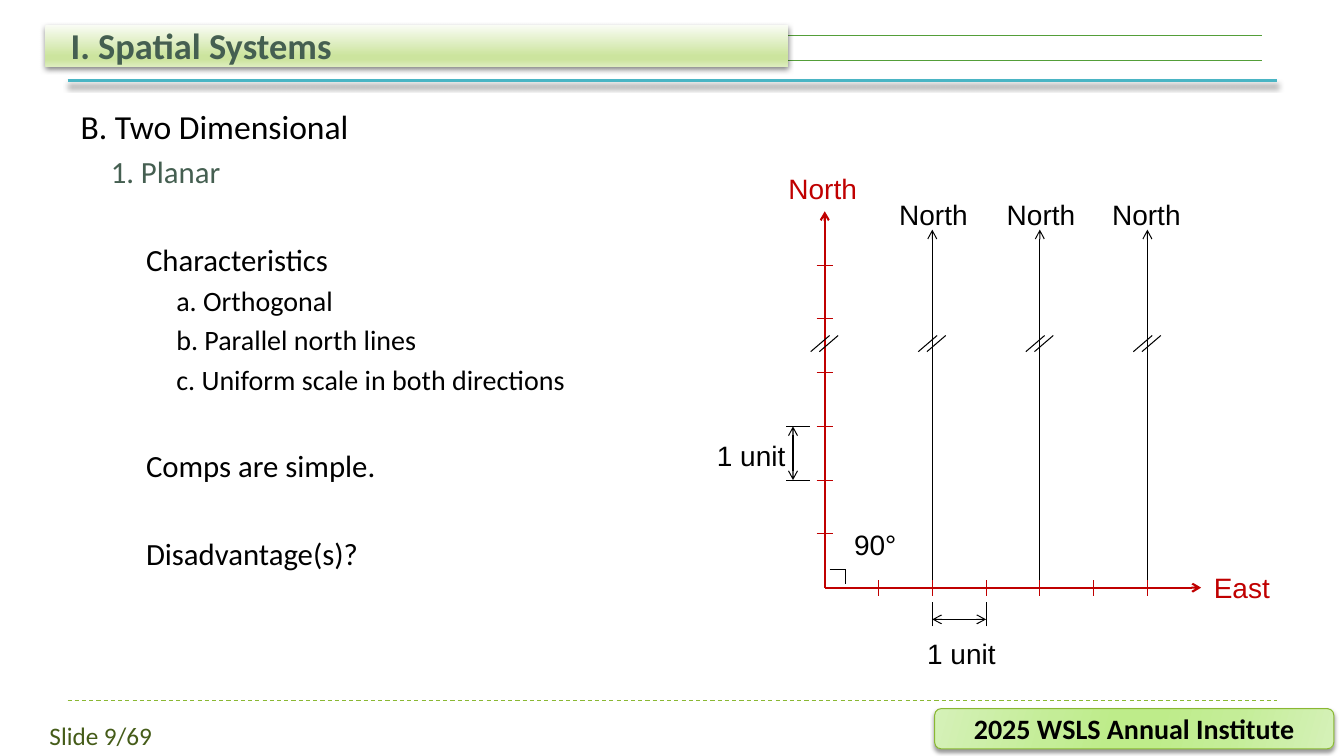
from dataclasses import dataclass

from lxml.etree import SubElement
from pptx import Presentation
from pptx.dml.color import RGBColor
from pptx.enum.dml import MSO_LINE
from pptx.enum.shapes import MSO_CONNECTOR, MSO_SHAPE
from pptx.enum.text import MSO_ANCHOR, MSO_AUTO_SIZE, PP_ALIGN
from pptx.oxml.ns import qn
from pptx.util import Inches, Pt

COLOURS = {
    "ink": "000000", "axis": "C00000", "heading": "455F51", "page": "455C19",
    "teal": "4AB5C4", "green": "549E39", "lime": "8AB833",
}
BANNER_STOPS = [(0, "F9FCF4"), (74, "CCE49E"), (83, "CCE49E"), (100, "DDEDBE")]
BADGE_STOPS = [(0, "D5F1B8"), (30, "C4ED97"), (45, "BEEC8A"),
               (55, "BEEC8A"), (73, "C4ED97"), (100, "D5F1B8")]
LEVELS = [(0, 24, 6), (0.3, 22, 5), (0.65, 22, 5), (0.95, 20, 4)]
SECTION_GAP = 36.5
OUTLINE = [
    (0, "B. Two Dimensional", "ink", False),
    (1, "1. Planar", "heading", False),
    (2, "Characteristics", "ink", True),
    (3, "a. Orthogonal", "ink", False),
    (3, "b. Parallel north lines", "ink", False),
    (3, "c. Uniform scale in both directions", "ink", False),
    (2, "Comps are simple.", "ink", True),
    (2, "Disadvantage(s)?", "ink", True),
]


@dataclass
class Grid:
    """Square cells counted from a corner, with rows running down or up."""
    left: float
    top: float
    cell: float
    down: int = 1

    def point(self, col, row):
        """Return the slide position of a grid point."""
        return (Inches(self.left + col * self.cell),
                Inches(self.top + self.down * row * self.cell))

    def box(self, col, row, cols, rows):
        """Return left, top, width and height of a block of cells."""
        return (*self.point(col, row), Inches(cols * self.cell), Inches(rows * self.cell))


PAGE = Grid(0, 0, 1)
PLOT = Grid(8.18, 5.83, 3.2 / 6, -1)


def rgb(name):
    """Look up a named colour."""
    return RGBColor.from_string(COLOURS[name])


def cast_shadow(effects, opacity, blur, distance):
    """Put a black shadow below the owner of an effect list."""
    shadow = SubElement(effects, qn("a:outerShdw"), blurRad=str(Pt(blur)),
                        dist=str(Pt(distance)), dir="5400000", rotWithShape="0")
    black = SubElement(shadow, qn("a:srgbClr"), val=COLOURS["ink"])
    SubElement(black, qn("a:alpha"), val=str(opacity * 1000))


def draw_line(slide, grid, start, end, colour="ink", weight=0.75, arrows="", dash=None, shadow=None):
    """Draw a line between grid points, with arrows at head, tail or both."""
    line = slide.shapes.add_connector(
        MSO_CONNECTOR.STRAIGHT, *grid.point(*start), *grid.point(*end))
    line.line.color.rgb = rgb(colour)
    line.line.width = Pt(weight)
    if dash:
        line.line.dash_style = dash
    properties = line.element.spPr
    for side in arrows.split():
        SubElement(properties.find(qn("a:ln")), qn(f"a:{side}End"), type="arrow")
    effects = SubElement(properties, qn("a:effectLst"))
    if shadow:
        cast_shadow(effects, *shadow)


def draw_panel(slide, outline, area, stops, angle, shadow):
    """Draw a gradient panel with a shadow."""
    panel = slide.shapes.add_shape(outline, *PAGE.box(*area))
    panel.fill.gradient()
    gradient = panel.element.spPr.find(qn("a:gradFill"))
    gradient.find(qn("a:lin")).set("ang", str(angle * 60000))
    stop_list = gradient.find(qn("a:gsLst"))
    stop_list.clear()
    for position, colour in stops:
        stop = SubElement(stop_list, qn("a:gs"), pos=str(position * 1000))
        SubElement(stop, qn("a:srgbClr"), val=colour)
    panel.line.fill.background()
    panel.shadow.inherit = False
    cast_shadow(panel.element.spPr.find(qn("a:effectLst")), *shadow)
    return panel


def style(paragraph, size, colour, font="Calibri", bold=False, align=PP_ALIGN.LEFT):
    """Format a paragraph and its runs."""
    paragraph.alignment = align
    for run in paragraph.runs:
        run.font.name = font
        run.font.size = Pt(size)
        run.font.bold = bold
        run.font.color.rgb = rgb(colour)


def write_label(slide, grid, area, text, size, colour="ink", font="Arial", align=PP_ALIGN.LEFT):
    """Write a one-line label."""
    frame = slide.shapes.add_textbox(*grid.box(*area)).text_frame
    frame.word_wrap = False
    frame.text = text
    style(frame.paragraphs[0], size, colour, font, align=align)


def write_title(slide):
    """Place the title above the banner."""
    title = slide.shapes.title
    title.left, title.top, title.width, title.height = PAGE.box(0.6, 0.2, 12, 0.51)
    frame = title.text_frame
    frame.text = "I. Spatial Systems"
    frame.vertical_anchor = MSO_ANCHOR.BOTTOM
    frame.auto_size = MSO_AUTO_SIZE.NONE
    style(frame.paragraphs[0], 26, "heading", bold=True)
    title.element.getparent().append(title.element)


def draw_frame(slide):
    """Draw the rules, banner, title, badge and page number."""
    draw_line(slide, PAGE, (0.67, 6.95), (12.67, 6.95), "lime", dash=MSO_LINE.DASH)
    draw_line(slide, PAGE, (0.67, 0.8), (12.67, 0.8), "teal", 2, shadow=(40, 4, 3.4))
    for row in (0.35, 0.6):
        draw_line(slide, PAGE, (0.73, row), (12.52, row), "green")
    draw_panel(slide, MSO_SHAPE.RECTANGLE, (0.45, 0.25, 7.37, 0.41), BANNER_STOPS, 90, (50, 4, 2))
    badge = draw_panel(slide, MSO_SHAPE.ROUNDED_RECTANGLE, (9.27, 7.03, 3.96, 0.4),
                       BADGE_STOPS, 16, (40, 3, 2))
    badge.line.color.rgb = rgb("lime")
    badge.line.width = Pt(0.75)
    badge.text_frame.text = "2025 WSLS Annual Institute"
    badge.text_frame.vertical_anchor = MSO_ANCHOR.MIDDLE
    style(badge.text_frame.paragraphs[0], 20, "ink", bold=True, align=PP_ALIGN.CENTER)
    write_label(slide, PAGE, (0.08, 7.1, 1.84, 0.4), "Slide 9/69", 18, "page",
                "Calibri", PP_ALIGN.CENTER)
    write_title(slide)


def write_outline(slide):
    """Write the indented outline on the left."""
    frame = slide.shapes.add_textbox(*PAGE.box(0.7, 1, 5.85, 5.9)).text_frame
    frame.word_wrap = True
    for number, (level, text, colour, opens_section) in enumerate(OUTLINE):
        indent, size, gap = LEVELS[level]
        paragraph = frame.add_paragraph() if number else frame.paragraphs[0]
        paragraph.text = text
        paragraph.level = level
        paragraph._p.get_or_add_pPr().set("marL", str(Inches(indent)))
        if number:
            paragraph.space_before = Pt(SECTION_GAP if opens_section else gap)
        style(paragraph, size, colour)


def draw_axes(slide):
    """Draw the north lines, the two axes with unit ticks, and the break marks."""
    for col in (2, 4, 6):
        draw_line(slide, PLOT, (col, 0), (col, 6.66), arrows="tail")
    for end in ((0, 7), (7, 0)):
        draw_line(slide, PLOT, (0, 0), end, "axis", 1.5, "tail")
    for unit in range(1, 7):
        draw_line(slide, PLOT, (-0.15, unit), (0.15, unit), "axis")
        draw_line(slide, PLOT, (unit, -0.15), (unit, 0.15), "axis")
    for col in (0, 2, 4, 6):
        for shift in (0, 0.16):
            draw_line(slide, PLOT, (col + shift + 0.09, 4.69), (col + shift - 0.26, 4.39))


def draw_dimensions(slide):
    """Mark one unit along each axis and the right angle at the origin."""
    draw_line(slide, PLOT, (0.09, 0.34), (0.38, 0.34))
    draw_line(slide, PLOT, (0.38, 0.34), (0.38, 0.07))
    for unit in (2, 3):
        draw_line(slide, PLOT, (-0.72, unit), (-0.27, unit), weight=0.5)
        draw_line(slide, PLOT, (unit, -0.72), (unit, -0.27), weight=0.5)
    draw_line(slide, PLOT, (-0.59, 3), (-0.59, 2), arrows="head tail")
    draw_line(slide, PLOT, (2, -0.59), (3, -0.59), arrows="head tail")


def label_diagram(slide):
    """Name the axes, north lines, units and angle."""
    for col, row, cols, text, colour in (
        (-0.86, 7.84, 1.67, "North", "axis"),
        (7.05, 0.41, 1.43, "East", "axis"),
        (1.72, -0.81, 1.67, "1 unit", "ink"),
        (-2.19, 2.87, 1.67, "1 unit", "ink"),
        (0.36, 1.22, 1.18, "90°", "ink"),
        (1.2, 7.35, 1.67, "North", "ink"),
        (3.2, 7.35, 1.67, "North", "ink"),
        (5.16, 7.35, 1.67, "North", "ink"),
    ):
        write_label(slide, PLOT, (col, row, cols, 0.82), text, 20, colour)


def main():
    """Build the slide and save it."""
    deck = Presentation()
    deck.slide_width, deck.slide_height = Inches(13.33), Inches(7.5)
    slide = deck.slides.add_slide(deck.slide_layouts.get_by_name("Title Only"))
    draw_frame(slide)
    write_outline(slide)
    draw_axes(slide)
    draw_dimensions(slide)
    label_diagram(slide)
    deck.save("out.pptx")


if __name__ == "__main__":
    main()
